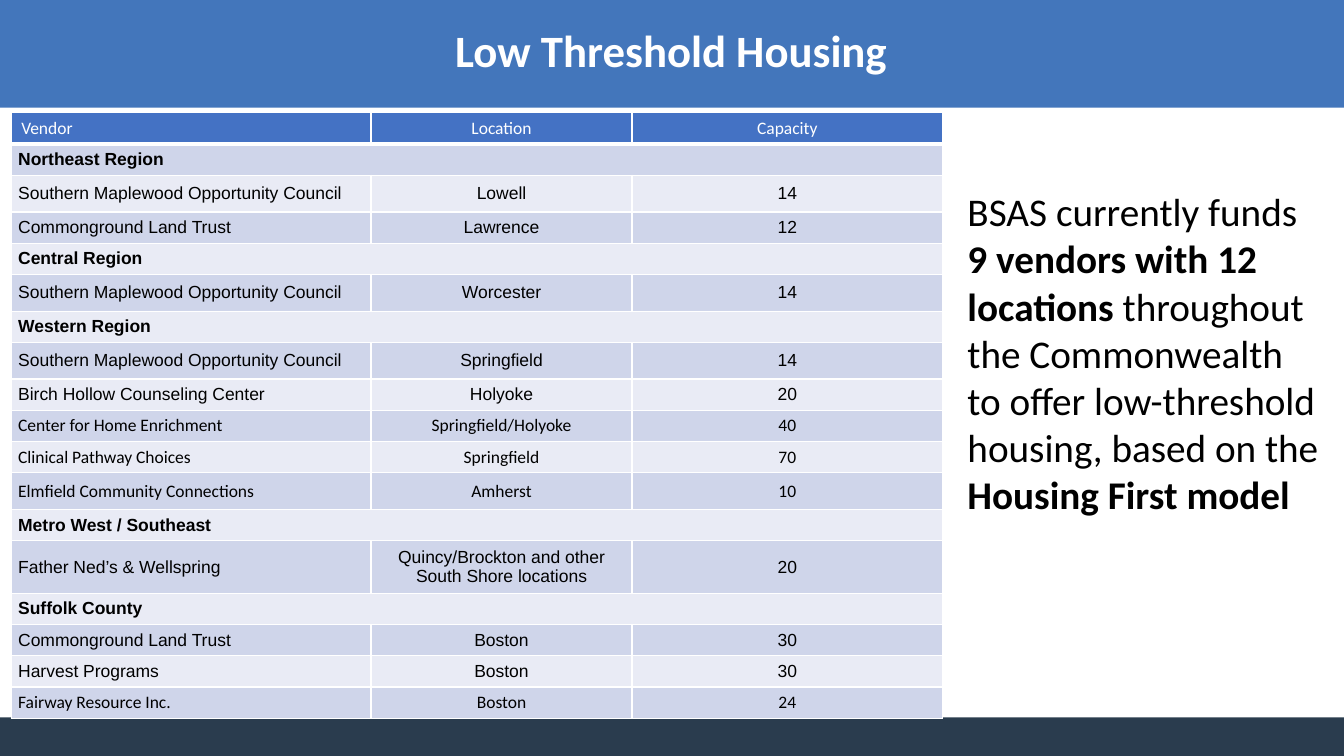
from lxml import etree
from pptx import Presentation
from pptx.dml.color import RGBColor
from pptx.enum import shapes, text
from pptx.oxml import ns
from pptx.util import Pt

COLORS = {
    "white": "FFFFFF", "black": "000000", "banner": "4376BB", "footer": "2A3C4E",
    "header": "4472C4", "odd": "CFD5EA", "even": "E9EBF5",
}
ROW, TALL, TWO_LINES = 22.35, 26.2, 37.4
COLUMNS = [257, 186.5, 221.8]
COUNCIL = "Southern Maplewood Opportunity Council"
TRUST = "Commonground Land Trust"

# Row height, font, cell texts; a single text spans the row as a region heading
ROWS = [
    (ROW, "Calibri", ["Vendor", "Location", "Capacity"]),
    (ROW, "Arial", ["Northeast Region"]),
    (TALL, "Arial", [COUNCIL, "Lowell", "14"]),
    (ROW, "Arial", [TRUST, "Lawrence", "12"]),
    (ROW, "Arial", ["Central Region"]),
    (TALL, "Arial", [COUNCIL, "Worcester", "14"]),
    (ROW, "Arial", ["Western Region"]),
    (TALL, "Arial", [COUNCIL, "Springfield", "14"]),
    (ROW, "Arial", ["Birch Hollow Counseling Center", "Holyoke", "20"]),
    (ROW, "Calibri", ["Center for Home Enrichment", "Springfield/Holyoke", "40"]),
    (ROW, "Calibri", ["Clinical Pathway Choices", "Springfield", "70"]),
    (TALL, "Calibri", ["Elmfield Community Connections", "Amherst", "10"]),
    (ROW, "Arial", ["Metro West / Southeast"]),
    (TWO_LINES, "Arial", ["Father Ned’s & Wellspring",
                          "Quincy/Brockton and other South Shore locations", "20"]),
    (ROW, "Arial", ["Suffolk County"]),
    (ROW, "Arial", [TRUST, "Boston", "30"]),
    (ROW, "Arial", ["Harvest Programs", "Boston", "30"]),
    (ROW, "Calibri", ["Fairway Resource Inc.", "Boston", "24"]),
]


class HousingSlide:
    def __init__(self, slide):
        self.slide = slide

    def color(self, name):
        return RGBColor.from_string(COLORS[name])

    def style(self, font, size, color, name="Calibri"):
        font.name, font.size = name, Pt(size)
        font.color.rgb = self.color(color)

    def band(self, top, height, color):
        """Draw a full-width strip."""
        strip = self.slide.shapes.add_shape(
            shapes.MSO_SHAPE.RECTANGLE, 0, Pt(top), Pt(960), Pt(height))
        strip.shadow.inherit = False
        strip.fill.solid()
        strip.fill.fore_color.rgb = self.color(color)
        strip.line.fill.background()

    def text(self, box, runs, size, color, align=text.PP_ALIGN.LEFT):
        """Add one wrapped paragraph from (text, bold) runs."""
        frame = self.slide.shapes.add_textbox(*map(Pt, box)).text_frame
        frame.word_wrap = True
        paragraph = frame.paragraphs[0]
        paragraph.alignment = align
        self.style(paragraph.font, size, color)
        for words, bold in runs:
            run = paragraph.add_run()
            run.text, run.font.bold = words, bold

    def borders(self, cell, bottom):
        properties = cell._tc.get_or_add_tcPr()
        for side, width in (("L", 1), ("R", 1), ("T", 1), ("B", bottom)):
            line = etree.SubElement(properties, ns.qn(f"a:ln{side}"), w=str(Pt(width)))
            fill = etree.SubElement(line, ns.qn("a:solidFill"))
            etree.SubElement(fill, ns.qn("a:srgbClr"), val=COLORS["white"])

    def cell(self, cell, fill, words, font, color, bold, align):
        self.borders(cell, 3 if fill == "header" else 1)
        cell.fill.solid()
        cell.fill.fore_color.rgb = self.color(fill)
        cell.margin_left = cell.margin_right = Pt(7.2 if fill == "header" else 5)
        cell.margin_top = cell.margin_bottom = Pt(3.5)
        if fill != "header":
            cell.vertical_anchor = text.MSO_ANCHOR.MIDDLE
        paragraph = cell.text_frame.paragraphs[0]
        paragraph.alignment = align
        self.style(paragraph.font, 12.5, color, font)
        paragraph.font.bold = bold
        if words:
            paragraph.add_run().text = words

    def table(self, left, top, columns, rows):
        table = self.slide.shapes.add_table(
            len(rows), len(columns), Pt(left), Pt(top),
            Pt(sum(columns)), Pt(sum(row[0] for row in rows))).table
        table.horz_banding = False
        for column, width in zip(table.columns, columns):
            column.width = Pt(width)
        for r, (height, font, words) in enumerate(rows):
            table.rows[r].height = Pt(height)
            fill = "header" if r == 0 else "odd" if r % 2 else "even"
            region = len(words) == 1
            for c in range(len(columns)):
                self.cell(table.cell(r, c), fill, words[c] if c < len(words) else "",
                          font, "white" if r == 0 else "black", region,
                          text.PP_ALIGN.CENTER if c else text.PP_ALIGN.LEFT)
            if region:
                table.cell(r, 0).merge(table.cell(r, len(columns) - 1))


def main():
    deck = Presentation()
    deck.slide_width, deck.slide_height = Pt(960), Pt(540)
    housing = HousingSlide(deck.slides.add_slide(deck.slide_layouts[6]))
    housing.band(0, 77, "banner")
    housing.band(512.5, 27.5, "footer")
    housing.text((24.5, 13, 910, 94), [("Low Threshold Housing", True)],
                 32, "white", text.PP_ALIGN.CENTER)
    housing.table(8, 80.5, COLUMNS, ROWS)
    housing.text((684, 130.5, 268.5, 245), [
        ("BSAS currently funds ", False),
        ("9 vendors with 12 locations ", True),
        ("throughout the Commonwealth to offer low-threshold housing, based on the ", False),
        ("Housing First model", True),
    ], 28, "black")
    deck.save("out.pptx")


if __name__ == "__main__":
    main()
